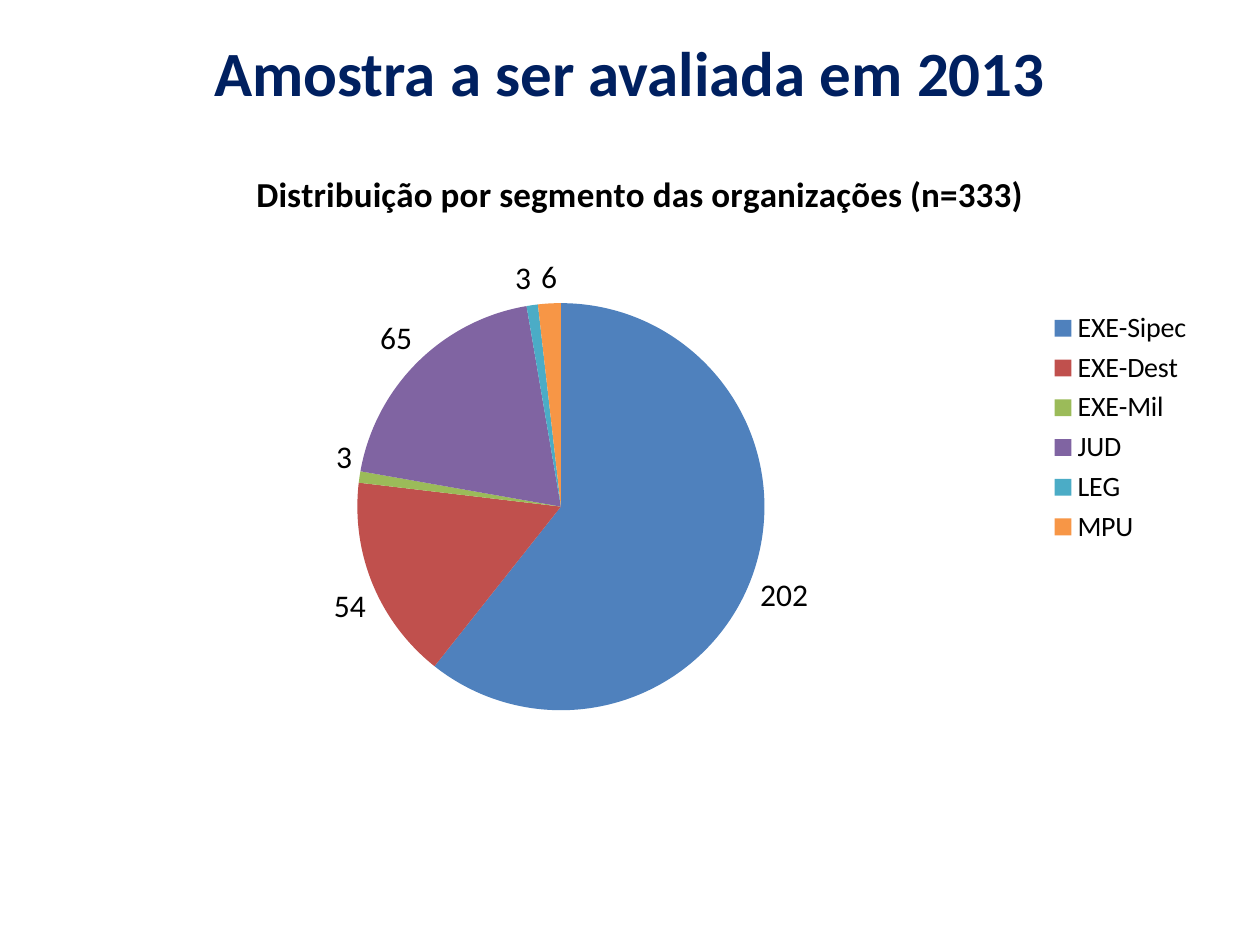
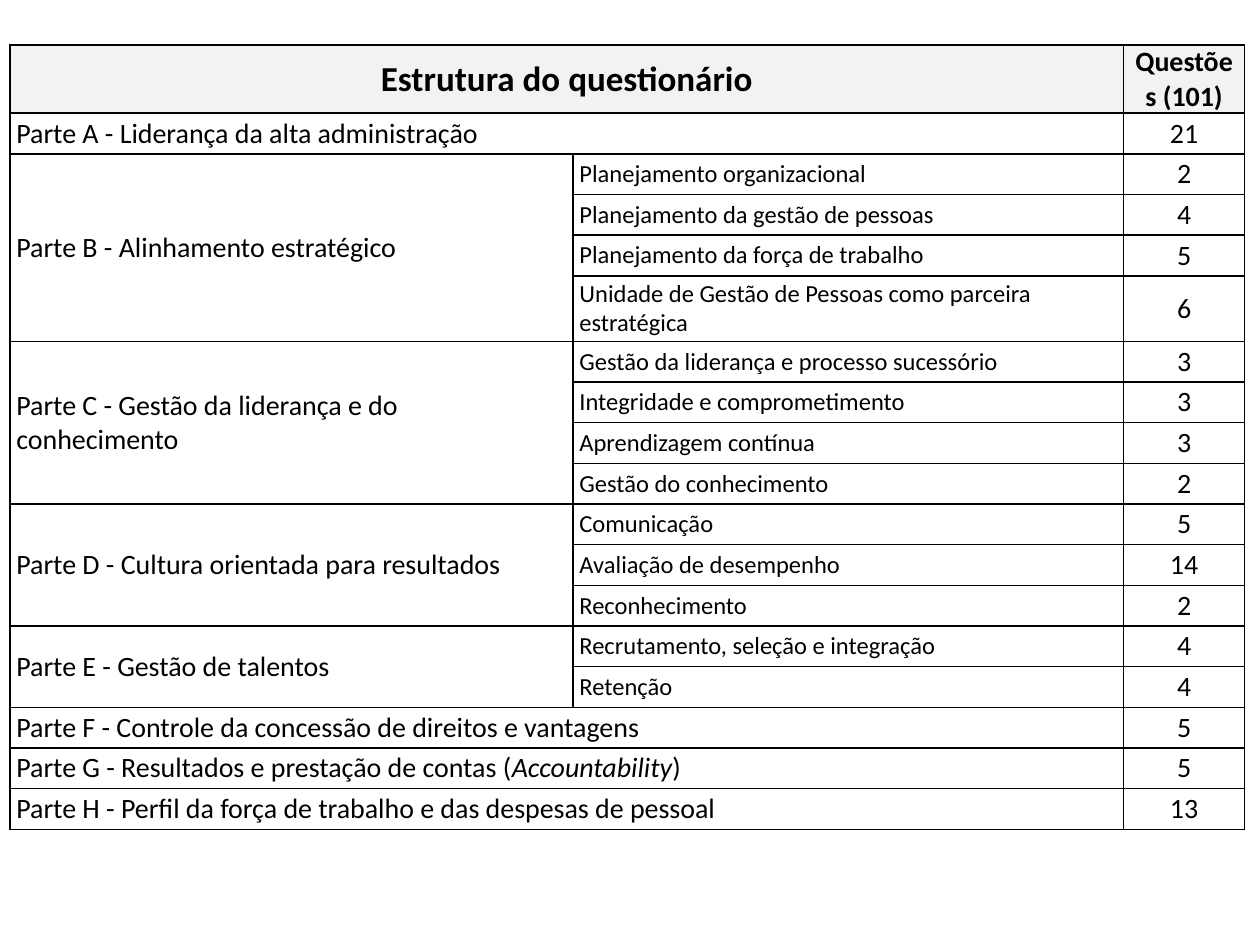
"""Build two slides: a pie chart of the 2013 sample and the questionnaire structure table."""
from dataclasses import dataclass

from lxml import etree
from pptx import Presentation
from pptx.chart.data import CategoryChartData
from pptx.dml.color import RGBColor
from pptx.enum.chart import XL_CHART_TYPE, XL_LABEL_POSITION, XL_LEGEND_POSITION
from pptx.enum.text import MSO_ANCHOR, PP_ALIGN
from pptx.oxml.ns import qn
from pptx.util import Cm, Pt

PIE = XL_CHART_TYPE.PIE
OUTSIDE = XL_LABEL_POSITION.OUTSIDE_END
RIGHT = XL_LEGEND_POSITION.RIGHT
MIDDLE = MSO_ANCHOR.MIDDLE
LEFT, CENTER = PP_ALIGN.LEFT, PP_ALIGN.CENTER


@dataclass(frozen=True)
class Theme:
    font: str = "Calibri"
    title: str = "002060"
    ink: str = "000000"
    paper: str = "FFFFFF"
    header: str = "F2F2F2"
    title_size: int = 36
    heading_size: int = 20
    label_size: int = 18
    body_size: int = 16
    detail_size: int = 14
    border: int = 1


THEME = Theme()

SAMPLE_TITLE = "Amostra a ser avaliada em 2013"
CHART_TITLE = "Distribuição por segmento das organizações (n=333)"
SEGMENTS = [
    ("EXE-Sipec", 202, "4F81BD"),
    ("EXE-Dest", 54, "C0504D"),
    ("EXE-Mil", 3, "9BBB59"),
    ("JUD", 65, "8064A2"),
    ("LEG", 3, "4BACC6"),
    ("MPU", 6, "F79646"),
]
PLOT_AREA = {"x": 0.07, "y": 0.28, "w": 0.72, "h": 0.72}

TABLE_HEADER = ("Estrutura do questionário", "Questões (101)")
PARTS = [
    ("Parte A - Liderança da alta administração", 21),
    ("Parte B - Alinhamento estratégico", [
        ("Planejamento organizacional", 2),
        ("Planejamento da gestão de pessoas", 4),
        ("Planejamento da força de trabalho", 5),
        ("Unidade de Gestão de Pessoas como parceira estratégica", 6),
    ]),
    ("Parte C - Gestão da liderança e do conhecimento", [
        ("Gestão da liderança e processo sucessório", 3),
        ("Integridade e comprometimento", 3),
        ("Aprendizagem contínua", 3),
        ("Gestão do conhecimento", 2),
    ]),
    ("Parte D - Cultura orientada para resultados", [
        ("Comunicação", 5),
        ("Avaliação de desempenho", 14),
        ("Reconhecimento", 2),
    ]),
    ("Parte E - Gestão de talentos", [
        ("Recrutamento, seleção e integração", 4),
        ("Retenção", 4),
    ]),
    ("Parte F - Controle da concessão de direitos e vantagens", 5),
    ("Parte G - Resultados e prestação de contas (*Accountability*)", 5),
    ("Parte H - Perfil da força de trabalho e das despesas de pessoal", 13),
]
COLUMN_WIDTHS = [11.35, 11.1, 2.44]
ROW_HEIGHT, HEADER_HEIGHT, WRAPPED_HEIGHT = 0.82, 1.37, 1.32
WRAP_LENGTH = 50


def style_font(font, size, bold=False, color=THEME.ink):
    font.name = THEME.font
    font.size = Pt(size)
    font.bold = bold
    font.color.rgb = RGBColor.from_string(color)


def write(frame, text, size, align=LEFT, bold=False, color=THEME.ink):
    """Write one paragraph; text between asterisks is italic."""
    paragraph = frame.paragraphs[0]
    paragraph.alignment = align
    for index, part in enumerate(text.split("*")):
        span = paragraph.add_run()
        span.text = part
        style_font(span.font, size, bold, color)
        if index % 2:
            span.font.italic = True


def add_title(page, text):
    box = page.shapes.add_textbox(Cm(1.27), Cm(0.56), Cm(22.86), Cm(1.75))
    box.text_frame.word_wrap = True
    box.text_frame.vertical_anchor = MIDDLE
    write(box.text_frame, text, THEME.title_size, CENTER, True, THEME.title)


def place_plot(chart):
    plot_area = chart._chartSpace.chart.plotArea
    for old in plot_area.findall(qn("c:layout")):
        plot_area.remove(old)
    layout = etree.Element(qn("c:layout"))
    manual = etree.SubElement(layout, qn("c:manualLayout"))
    settings = {"layoutTarget": "inner", "xMode": "edge", "yMode": "edge", **PLOT_AREA}
    for name, value in settings.items():
        etree.SubElement(manual, qn(f"c:{name}")).set("val", str(value))
    plot_area.insert(0, layout)


def add_segment_chart(page):
    names, values, colors = zip(*SEGMENTS)
    data = CategoryChartData()
    data.categories = names
    data.add_series("Organizações", values)
    chart = page.shapes.add_chart(PIE, Cm(1.5), Cm(2.92), Cm(22.81), Cm(11.4), data).chart
    style_font(chart.font, 10)
    chart.has_title = True
    write(chart.chart_title.text_frame, CHART_TITLE, THEME.heading_size, CENTER, True)
    chart.has_legend = True
    chart.legend.position = RIGHT
    chart.legend.include_in_layout = False
    style_font(chart.legend.font, THEME.body_size)

    plot = chart.plots[0]
    plot.vary_by_categories = True
    plot.has_data_labels = True
    labels = plot.data_labels
    labels.show_value = True
    labels.show_percentage = False
    labels.position = OUTSIDE
    style_font(labels.font, THEME.label_size)
    for index, color in enumerate(colors):
        fill = plot.series[0].points[index].format.fill
        fill.solid()
        fill.fore_color.rgb = RGBColor.from_string(color)
    place_plot(chart)


def format_cell(cell, color):
    properties = cell._tc.get_or_add_tcPr()
    for side in ("lnL", "lnR", "lnT", "lnB"):
        line = etree.SubElement(properties, qn(f"a:{side}"), w=str(Pt(THEME.border)))
        solid = etree.SubElement(line, qn("a:solidFill"))
        etree.SubElement(solid, qn("a:srgbClr"), val=THEME.ink)
    cell.fill.solid()
    cell.fill.fore_color.rgb = RGBColor.from_string(color)
    cell.vertical_anchor = MIDDLE
    cell.margin_left = cell.margin_right = Cm(0.13)
    cell.margin_top = cell.margin_bottom = 0


def add_questionnaire_table(page):
    groups = [(name, body if isinstance(body, list) else [("", body)]) for name, body in PARTS]
    topics = [topic for _, body in groups for topic in body]
    heights = [HEADER_HEIGHT] + [
        WRAPPED_HEIGHT if len(name) > WRAP_LENGTH else ROW_HEIGHT for name, _ in topics
    ]
    table = page.shapes.add_table(
        len(heights), len(COLUMN_WIDTHS), Cm(0.2), Cm(0.91),
        Cm(sum(COLUMN_WIDTHS)), Cm(sum(heights)),
    ).table
    for column, width in zip(table.columns, COLUMN_WIDTHS):
        column.width = Cm(width)
    for index, height in enumerate(heights):
        table.rows[index].height = Cm(height)
        for column in range(len(COLUMN_WIDTHS)):
            format_cell(table.cell(index, column), THEME.paper if index else THEME.header)

    heading, count_heading = TABLE_HEADER
    table.cell(0, 0).merge(table.cell(0, 1))
    write(table.cell(0, 0).text_frame, heading, THEME.heading_size, CENTER, True)
    write(table.cell(0, 2).text_frame, count_heading, THEME.body_size, CENTER, True)

    row = 1
    for part, body in groups:
        has_topics = bool(body[0][0])
        last_row, last_column = row + len(body) - 1, 0 if has_topics else 1
        table.cell(row, 0).merge(table.cell(last_row, last_column))
        write(table.cell(row, 0).text_frame, part, THEME.body_size)
        for topic, questions in body:
            if has_topics:
                write(table.cell(row, 1).text_frame, topic, THEME.detail_size)
            write(table.cell(row, 2).text_frame, str(questions), THEME.body_size, CENTER)
            row += 1


def main():
    deck = Presentation()
    deck.slide_width, deck.slide_height = Cm(25.4), Cm(19.05)
    blank = deck.slide_layouts[6]
    sample_page = deck.slides.add_slide(blank)
    add_title(sample_page, SAMPLE_TITLE)
    add_segment_chart(sample_page)
    add_questionnaire_table(deck.slides.add_slide(blank))
    deck.save("out.pptx")


if __name__ == "__main__":
    main()
